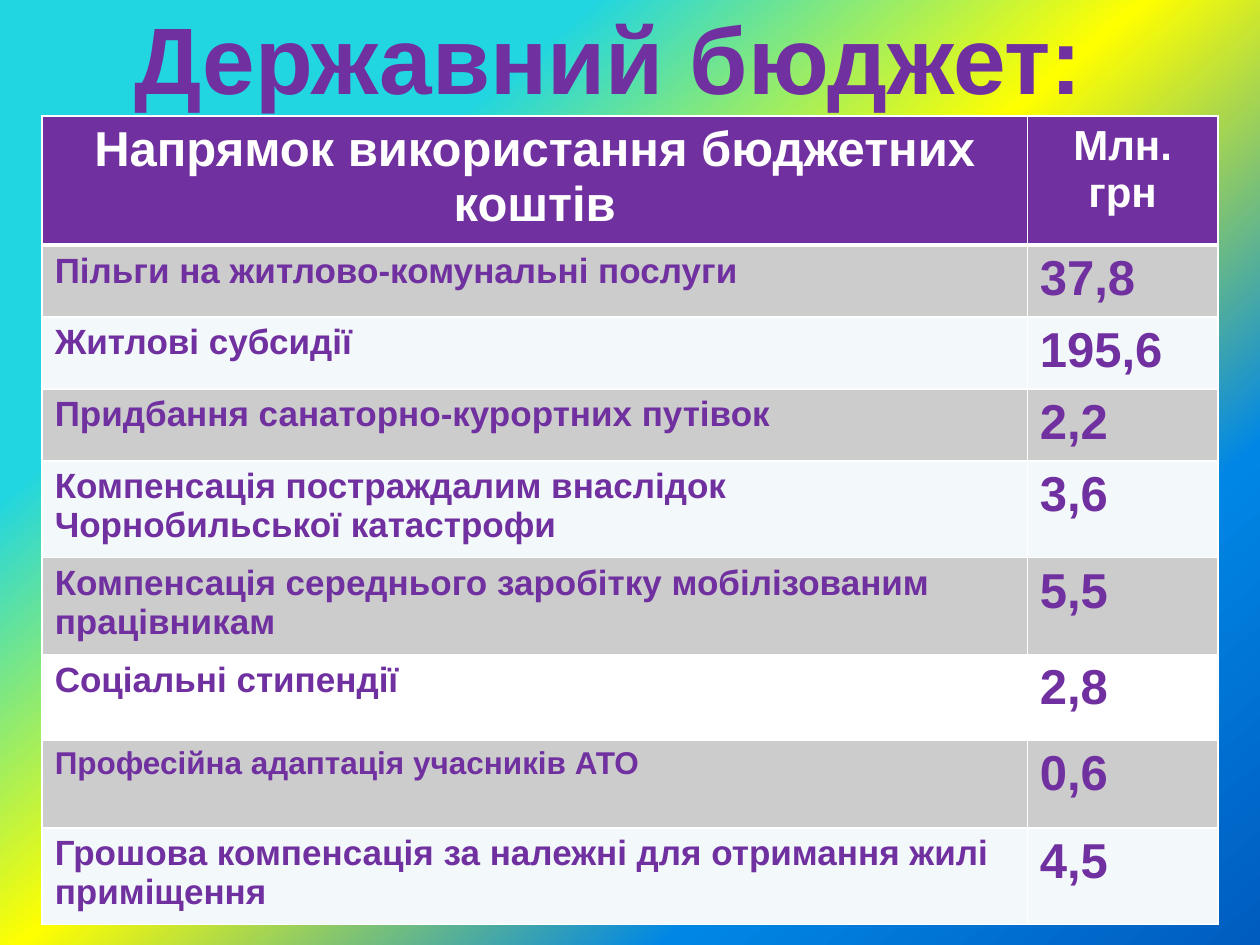
import dataclasses
import pptx
import pptx.dml.color
import pptx.enum.text
import pptx.oxml
import pptx.oxml.ns
import pptx.util

Cm = pptx.util.Cm
Pt = pptx.util.Pt
RGB = pptx.dml.color.RGBColor.from_string
Align = pptx.enum.text.PP_ALIGN


@dataclasses.dataclass(frozen=True)
class Theme:
    """Hold the colours, font and type sizes."""
    font: str = "Arial"
    main: str = "7030A0"
    white: str = "FFFFFF"
    grey: str = "CCCCCC"
    pale: str = "F3F9FA"
    title: int = 54
    big: int = 28
    unit: int = 24
    body: int = 20
    small: int = 18
    stops: tuple = ((25, "21D6E0"), (48, "FFFF00"), (75, "0087E6"), (100, "005CBF"))
    angle: int = 50


LOOK = Theme()
HEAD = ("Напрямок використання бюджетних коштів", "Млн. грн")
ROWS = (
    ("Пільги на житлово-комунальні послуги", "37,8", 1.45, LOOK.grey, LOOK.body),
    ("Житлові субсидії", "195,6", 1.45, LOOK.pale, LOOK.body),
    ("Придбання санаторно-курортних путівок", "2,2", 1.45, LOOK.grey, LOOK.body),
    ("Компенсація постраждалим внаслідок Чорнобильської катастрофи", "3,6", 1.95, LOOK.pale, LOOK.body),
    ("Компенсація середнього заробітку мобілізованим працівникам", "5,5", 1.95, LOOK.grey, LOOK.body),
    ("Соціальні стипендії", "2,8", 1.73, LOOK.white, LOOK.body),
    ("Професійна адаптація учасників АТО", "0,6", 1.77, LOOK.grey, LOOK.small),
    ("Грошова компенсація за належні для отримання жилі приміщення", "4,5", 1.95, LOOK.pale, LOOK.body),
)


def write(frame, text, size, color, align):
    """Set bold text in a frame."""
    frame.text = text
    line = frame.paragraphs[0]
    line.alignment = align
    font = line.runs[0].font
    font.name, font.size, font.bold = LOOK.font, Pt(size), True
    font.color.rgb = RGB(color)


def paint(slide):
    """Fill the background with the theme gradient."""
    fill = slide.background.fill
    fill.gradient()
    grad = slide.background._cSld.find(".//" + pptx.oxml.ns.qn("a:gradFill"))
    for part in list(grad):
        grad.remove(part)
    space = pptx.oxml.ns.nsdecls("a")
    stops = "".join(
        f'<a:gs pos="{place * 1000}"><a:srgbClr val="{color}"/></a:gs>'
        for place, color in LOOK.stops
    )
    grad.append(pptx.oxml.parse_xml(f"<a:gsLst {space}>{stops}</a:gsLst>"))
    grad.append(pptx.oxml.parse_xml(f'<a:lin {space} ang="{LOOK.angle * 60000}" scaled="0"/>'))


def head(slide, text):
    """Place and format the title."""
    title = slide.shapes.title
    title.left, title.top = Cm(1.47), Cm(0)
    title.width, title.height = Cm(21.6), Cm(4.88)
    frame = title.text_frame
    frame.word_wrap = True
    frame.auto_size = pptx.enum.text.MSO_AUTO_SIZE.NONE
    frame.vertical_anchor = pptx.enum.text.MSO_ANCHOR.TOP
    frame.margin_top = Cm(0)
    write(frame, text, LOOK.title, LOOK.main, Align.CENTER)


def edge(cell, base):
    """Draw white cell borders with the given bottom width."""
    props = cell._tc.get_or_add_tcPr()
    space = pptx.oxml.ns.nsdecls("a")
    for spot, (side, width) in enumerate((("L", 1), ("R", 1), ("T", 1), ("B", base))):
        props.insert(spot, pptx.oxml.parse_xml(
            f'<a:ln{side} {space} w="{Pt(width)}"><a:solidFill>'
            f'<a:srgbClr val="{LOOK.white}"/></a:solidFill></a:ln{side}>'
        ))


def put(cell, text, size, color, fill, align=Align.LEFT, base=1):
    """Fill one table cell."""
    write(cell.text_frame, text, size, color, align)
    cell.fill.solid()
    cell.fill.fore_color.rgb = RGB(fill)
    edge(cell, base)


def grid(slide):
    """Build the budget table."""
    tall = [2.6] + [row[2] for row in ROWS]
    table = slide.shapes.add_table(
        len(tall), 2, Cm(0.85), Cm(2.34), Cm(23.7), Cm(sum(tall))
    ).table
    for col, width in zip(table.columns, (19.86, 3.84)):
        col.width = Cm(width)
    for row, height in zip(table.rows, tall):
        row.height = Cm(height)
    for col, (text, size) in enumerate(zip(HEAD, (LOOK.big, LOOK.unit))):
        put(table.cell(0, col), text, size, LOOK.white, LOOK.main, Align.CENTER, 3)
    for row, (name, sum_, _, fill, size) in enumerate(ROWS, 1):
        put(table.cell(row, 0), name, size, LOOK.main, fill)
        put(table.cell(row, 1), sum_, LOOK.big, LOOK.main, fill)


def main():
    """Build and save the slide."""
    deck = pptx.Presentation()
    deck.slide_width, deck.slide_height = Cm(25.4), Cm(19.05)
    slide = deck.slides.add_slide(deck.slide_layouts[5])
    paint(slide)
    head(slide, "Державний бюджет:")
    grid(slide)
    deck.save("out.pptx")


if __name__ == "__main__":
    main()
